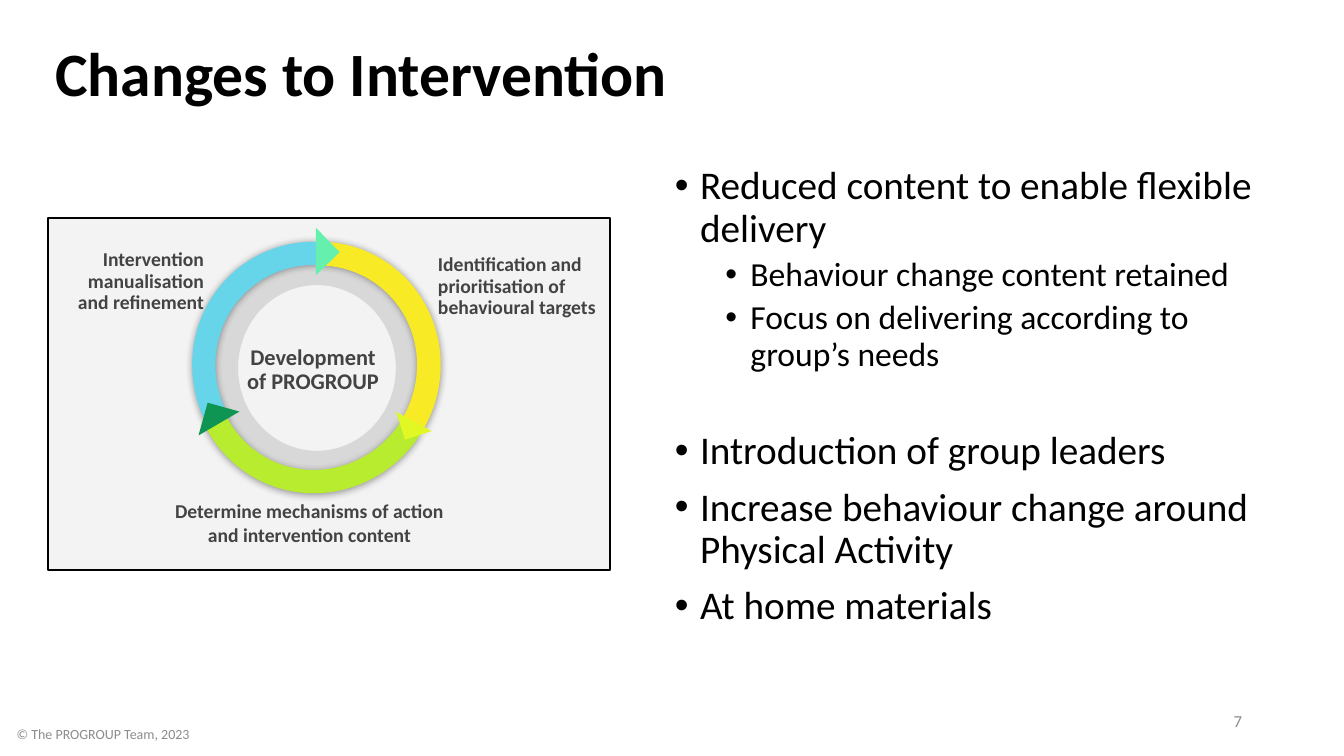
from dataclasses import dataclass

from lxml.etree import SubElement
from pptx import Presentation
from pptx.dml.color import RGBColor
from pptx.enum.shapes import MSO_SHAPE as Shape
from pptx.enum.text import MSO_ANCHOR as Anchor, MSO_AUTO_SIZE as AutoSize, PP_ALIGN as Align
from pptx.oxml.ns import qn
from pptx.util import Emu, Pt

EMU_PER_PX = 914400 / 100.8


@dataclass(frozen=True)
class Theme:
    font: str = "Calibri"
    ink: str = "000000"
    label: str = "434343"
    muted: str = "8C8C8C"
    panel: str = "F3F3F3"
    yellow: str = "F8EA25"
    blue: str = "66D5EA"
    lime: str = "B8EC2F"
    mint: str = "65F0AD"
    lemon: str = "E2F825"
    green: str = "0E9453"
    title_size: int = 44
    body_sizes: tuple = (28, 24)
    centre_size: int = 16
    label_size: int = 14
    number_size: int = 12
    footer_size: int = 10


THEME = Theme()


def px(length):
    return Emu(round(length * EMU_PER_PX))


def box_px(*lengths):
    return [px(length) for length in lengths]


def write(paragraph, text, size, color=THEME.ink, bold=False, align=Align.LEFT,
          line_spacing=1.0, space_before=0):
    """Put formatted text in a paragraph."""
    paragraph.alignment = align
    paragraph.line_spacing = line_spacing
    paragraph.space_before = Pt(space_before)
    run = paragraph.add_run()
    run.text = text
    run.font.name = THEME.font
    run.font.size = Pt(size)
    run.font.bold = bold
    run.font.color.rgb = RGBColor.from_string(color)


def add_text_frame(slide, box, anchor=Anchor.TOP, inset=None):
    frame = slide.shapes.add_textbox(*box_px(*box)).text_frame
    frame.word_wrap = True
    frame.vertical_anchor = anchor
    if inset is not None:
        frame.margin_left = frame.margin_right = px(inset)
        frame.margin_top = frame.margin_bottom = px(inset)
    return frame


def add_text(slide, box, text, size, anchor=Anchor.TOP, inset=None, **text_format):
    frame = add_text_frame(slide, box, anchor, inset)
    write(frame.paragraphs[0], text, size, **text_format)


def add_bullet(paragraph, level):
    paragraph.level = level
    properties = paragraph._p.get_or_add_pPr()
    properties.set("marL", str(Pt(54 if level else 18)))
    properties.set("indent", str(-Pt(18)))
    SubElement(properties, qn("a:buFont"), typeface="Arial")
    SubElement(properties, qn("a:buChar"), char="•")


def add_figure(slide, kind, box, color, rotation=0, adjustments=(), flip=False):
    """Add a filled preset shape without outline or shadow."""
    shape = slide.shapes.add_shape(kind, *box_px(*box))
    shape.shadow.inherit = False
    shape.fill.solid()
    shape.fill.fore_color.rgb = RGBColor.from_string(color)
    shape.line.fill.background()
    shape.rotation = rotation
    for index, value in enumerate(adjustments):
        shape.adjustments[index] = value
    if flip:
        shape._element.spPr.find(qn("a:xfrm")).set("flipH", "1")
    return shape


def set_alpha(color_element, percent):
    SubElement(color_element, qn("a:alpha"), val=str(percent * 1000))


def add_soft_shadow(shape):
    effects = shape._element.spPr.find(qn("a:effectLst"))
    shadow = SubElement(effects, qn("a:outerShdw"), blurRad=str(Pt(5.6)),
                        dist=str(Pt(0.8)), dir="5400000", rotWithShape="0")
    set_alpha(SubElement(shadow, qn("a:srgbClr"), val=THEME.ink), 40)


def add_title(slide, text):
    title = slide.shapes.title
    title.left, title.top, title.width, title.height = box_px(45, 16, 1140, 121)
    frame = title.text_frame
    frame.auto_size = AutoSize.NONE
    frame.word_wrap = True
    frame.vertical_anchor = Anchor.MIDDLE
    write(frame.paragraphs[0], text, THEME.title_size, bold=True, line_spacing=0.9)


def add_bullet_list(slide, box, items):
    """Items are (level, space before, text)."""
    frame = add_text_frame(slide, box)
    for index, (level, space, text) in enumerate(items):
        paragraph = frame.add_paragraph() if index else frame.paragraphs[0]
        add_bullet(paragraph, level)
        write(paragraph, text, THEME.body_sizes[level], line_spacing=0.9, space_before=space)


def add_cycle(slide):
    # Panel and pale inner ring
    panel = add_figure(slide, Shape.RECTANGLE, (48, 218, 562, 352), THEME.panel)
    panel.line.color.rgb = RGBColor.from_string(THEME.ink)
    panel.line.width = Pt(1.75)
    ring = add_figure(slide, Shape.DONUT, (201, 248, 232, 240), THEME.ink, adjustments=[0.16])
    set_alpha(ring._element.spPr.find(".//" + qn("a:srgbClr")), 11)

    # Stage labels and centre
    labels = [
        ((48, 243, 163, 76), "Intervention manualisation and refinement", Align.RIGHT, 0.9),
        ((431, 248, 183, 76), "Identification and prioritisation of behavioural targets",
         Align.LEFT, 0.9),
        ((161, 492, 297, 64), "Determine mechanisms of action and intervention content",
         Align.CENTER, 1.0),
    ]
    for box, text, align, spacing in labels:
        add_text(slide, box, text, THEME.label_size, inset=7, color=THEME.label,
                 bold=True, align=align, line_spacing=spacing)
    add_text(slide, (235, 332, 156, 76), "Development of PROGROUP", THEME.centre_size,
             anchor=Anchor.MIDDLE, inset=7, color=THEME.label, bold=True,
             align=Align.CENTER, line_spacing=0.9)

    # Arcs, each followed by the arrowheads that lie above it
    arcs = [
        (THEME.yellow, 30.7, (144.14, 0.01, 0.096), False, []),
        (THEME.blue, 329.3, (143.49, 214.73, 0.094), True,
         [(THEME.mint, 225.8, (299, 235, 34, 33))]),
        (THEME.lime, 210.7, (143.16, 215.03, 0.094), True,
         [(THEME.lemon, 342.4, (400, 407, 28, 29)),
          (THEME.green, 105.6, (202, 407, 34, 33))]),
    ]
    for color, rotation, adjustments, flip, heads in arcs:
        add_soft_shadow(add_figure(slide, Shape.BLOCK_ARC, (193, 241, 247, 253), color,
                                   rotation, adjustments, flip))
        for head_color, head_rotation, box in heads:
            add_figure(slide, Shape.RIGHT_TRIANGLE, box, head_color, head_rotation)


def main():
    presentation = Presentation()
    presentation.slide_width, presentation.slide_height = box_px(1344, 756)
    slide = presentation.slides.add_slide(presentation.slide_layouts[5])

    add_title(slide, "Changes to Intervention")
    add_bullet_list(slide, (665, 161, 619, 544), [
        (0, 0, "Reduced content to enable flexible delivery"),
        (1, 5, "Behaviour change content retained"),
        (1, 5, "Focus on delivering according to group’s needs"),
        (0, 41, "Introduction of group leaders"),
        (0, 10, "Increase behaviour change around Physical Activity"),
        (0, 10, "At home materials"),
    ])
    add_cycle(slide)

    # Page number and copyright line
    add_text(slide, (950, 701, 302, 40), "7", THEME.number_size, anchor=Anchor.MIDDLE,
             color=THEME.muted, align=Align.RIGHT)
    add_text(slide, (3, 723, 200, 22), "© The PROGROUP Team, 2023", THEME.footer_size,
             anchor=Anchor.MIDDLE, inset=0, color=THEME.muted, align=Align.CENTER)
    presentation.save("out.pptx")


if __name__ == "__main__":
    main()
